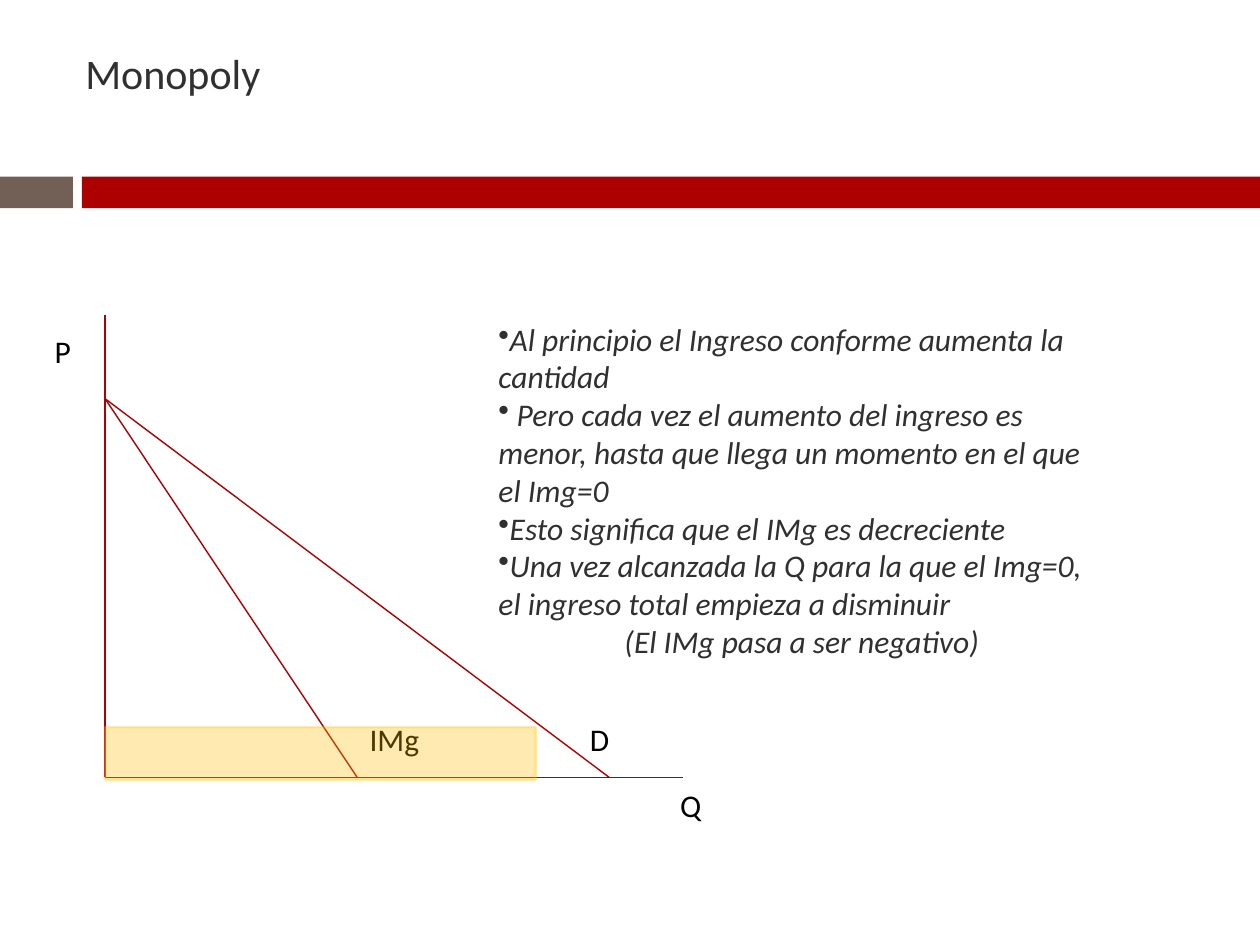
from lxml import etree
from pptx import Presentation
from pptx.dml.color import RGBColor
from pptx.enum.shapes import MSO_CONNECTOR, MSO_SHAPE
from pptx.enum.text import MSO_AUTO_SIZE
from pptx.oxml.ns import qn
from pptx.util import Cm, Pt

STRAIGHT = MSO_CONNECTOR.STRAIGHT
RECTANGLE = MSO_SHAPE.RECTANGLE
FIT_SHAPE = MSO_AUTO_SIZE.SHAPE_TO_FIT_TEXT

COLORS = {
    "red": "AD0101",
    "brown": "726056",
    "gold": "FFC000",
    "text": "303030",
    "label": "000000",
}


class SlideBuilder:
    font = "Calibri"
    line_width = Pt(0.79)

    def __init__(self, page):
        self.page = page

    def paint(self, color_format, color, opacity=None):
        color_format.rgb = RGBColor.from_string(COLORS[color])

    def set_opacity(self, fill_parent, percent):
        for color in fill_parent.iter(qn("a:srgbClr")):
            etree.SubElement(color, qn("a:alpha")).set("val", str(percent * 1000))

    def bar(self, left, top, width, height, color, opacity=None, outline=None):
        box = self.page.shapes.add_shape(
            RECTANGLE, Cm(left), Cm(top), Cm(width), Cm(height))
        box.shadow.inherit = False
        box.fill.solid()
        self.paint(box.fill.fore_color, color)
        if outline:
            self.paint(box.line.color, color)
            box.line.width = Pt(outline)
        else:
            box.line.fill.background()
        if opacity:
            self.set_opacity(box._element.spPr, opacity)

    def line(self, start, end):
        points = [Cm(value) for value in (*start, *end)]
        connector = self.page.shapes.add_connector(STRAIGHT, *points)
        self.paint(connector.line.color, "red")
        connector.line.width = self.line_width
        etree.SubElement(connector._element.spPr, qn("a:effectLst"))

    def text(self, left, top, width, height, lines, size=18, color="label",
             italic=False):
        box = self.page.shapes.add_textbox(
            Cm(left), Cm(top), Cm(width), Cm(height))
        frame = box.text_frame
        frame.word_wrap = True
        frame.auto_size = FIT_SHAPE
        for index, line in enumerate(lines):
            para = frame.paragraphs[0] if index == 0 else frame.add_paragraph()
            para.text = line
            para.font.name = self.font
            para.font.size = Pt(size)
            para.font.italic = italic
            self.paint(para.font.color, color)
        return frame.paragraphs

    def bullet(self, para):
        properties = para._p.get_or_add_pPr()
        mark = etree.Element(qn("a:buChar"))
        mark.set("char", "•")
        properties.insert(0, mark)

    def indent(self, para, distance):
        para._p.get_or_add_pPr().set("marL", str(Cm(distance)))


def main():
    deck = Presentation()
    deck.slide_width, deck.slide_height = Cm(25.4), Cm(19.05)
    builder = SlideBuilder(deck.slides.add_slide(deck.slide_layouts[6]))

    # Header band and title
    builder.bar(0, 3.56, 1.47, 0.64, "brown")
    builder.bar(1.65, 3.56, 23.75, 0.64, "red")
    builder.text(1.47, 0.84, 15.24, 1.27, ["Monopoly"], 24, "text")

    # Axes, demand and marginal revenue
    origin_x, origin_y = 2.12, 15.67
    origin = (origin_x, origin_y)
    intercept = (origin_x, 8.04)
    builder.line((origin_x, 6.35), origin)
    builder.line(origin, (13.76, origin_y))
    for quantity in (12.28, 7.2):
        builder.line(intercept, (quantity, origin_y))

    # Graph labels
    for label, left, top, width in (
        ("Q", 13.46, 15.72, 0.85),
        ("P", 0.85, 6.56, 0.85),
        ("IMg", 7.2, 14.4, 1.9),
        ("D", 11.64, 14.4, 1.48),
    ):
        builder.text(left, top, width, 1.02, [label])

    # Highlighted area over the graph
    builder.bar(origin_x, 14.66, 8.68, 1.06, "gold", opacity=30, outline=1.5)

    # Explanation
    *points, closing = builder.text(9.8, 6.32, 12.7, 6.4, [
        "Al principio el Ingreso conforme aumenta la cantidad",
        " Pero cada vez el aumento del ingreso es menor, "
        "hasta que llega un momento en el que el Img=0",
        "Esto significa que el IMg es decreciente",
        "Una vez alcanzada la Q para la que el Img=0, "
        "el ingreso total empieza a disminuir",
        "(El IMg pasa a ser negativo)",
    ], color="text", italic=True)
    for para in points:
        builder.bullet(para)
    builder.indent(closing, 2.54)

    deck.save("out.pptx")


if __name__ == "__main__":
    main()
